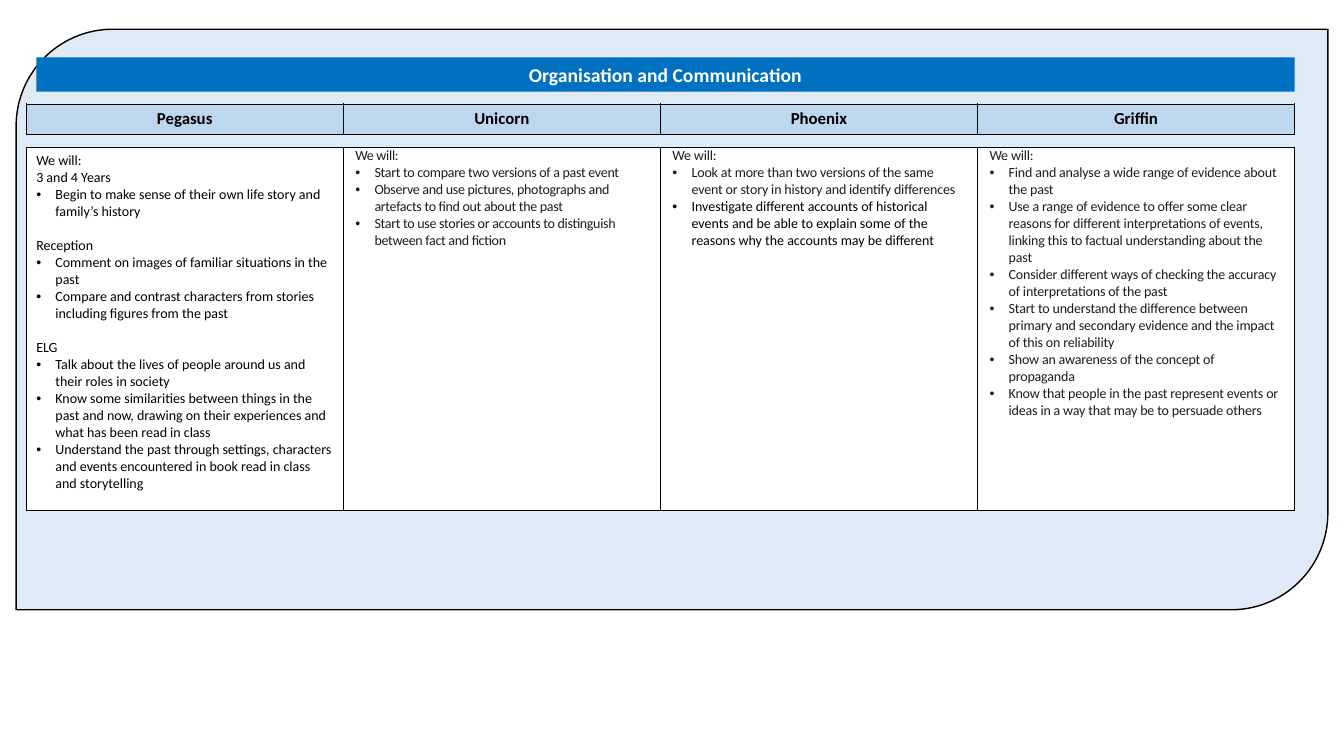
from lxml import etree
from pptx import Presentation, util as u
from pptx.dml.color import RGBColor
from pptx.enum import shapes, text
from pptx.oxml.ns import qn

BLACK, CHARCOAL, WHITE = "000000", "1C1C1C", "FFFFFF"
LEFT, WIDTH = 0.26, 12.58
PLAIN, BULLET, HEADING = "plain", "bullet", "heading"


def paint(target, colour):
    if hasattr(target, "solid"):
        target.solid()
        target = target.fore_color
    else:
        target = target.color
    target.rgb = RGBColor.from_string(colour)


def add_text(para, wording, size, colour, bold=False, spacing=0):
    span = para.add_run()
    span.text = wording
    span.font.name = "Calibri"
    span.font.size = u.Pt(size)
    span.font.bold = bold
    paint(span.font.fill, colour)
    if spacing:
        span.font._element.set("spc", str(spacing))


names = ["Pegasus", "Unicorn", "Phoenix", "Griffin"]
goals = [
    [
        (PLAIN, "We will:"),
        (PLAIN, "3 and 4 Years"),
        (BULLET, "Begin to make sense of their own life story and family’s history"),
        (HEADING, "Reception"),
        (BULLET, "Comment on images of familiar situations in the past"),
        (BULLET, "Compare and contrast characters from stories including figures from the past"),
        (HEADING, "ELG"),
        (BULLET, "Talk about the lives of people around us and their roles in society"),
        (BULLET, "Know some similarities between things in the past and now, drawing on their "
                 "experiences and what has been read in class"),
        (BULLET, "Understand the past through settings, characters and events encountered in "
                 "book read in class and storytelling"),
    ],
    [
        (PLAIN, "We will:"),
        (BULLET, "Start to compare two versions of a past event"),
        (BULLET, "Observe and use pictures, photographs and artefacts to find out about the past"),
        (BULLET, "Start to use stories or accounts to distinguish between fact and fiction"),
    ],
    [
        (PLAIN, "We will:"),
        (BULLET, "Look at more than two versions of the same event or story in history and "
                 "identify differences"),
        (BULLET, "Investigate different accounts of historical events and be able to explain "
                 "some of the reasons why the accounts may be different"),
    ],
    [
        (PLAIN, "We will:"),
        (BULLET, "Find and analyse a wide range of evidence about the past"),
        (BULLET, "Use a range of evidence to offer some clear reasons for different "
                 "interpretations of events, linking this to factual understanding about the past"),
        (BULLET, "Consider different ways of checking the accuracy of interpretations of the past"),
        (BULLET, "Start to understand the difference between primary and secondary evidence "
                 "and the impact of this on reliability"),
        (BULLET, "Show an awareness of the concept of propaganda"),
        (BULLET, "Know that people in the past represent events or ideas in a way that may be "
                 "to persuade others"),
    ],
]
letter_spacing = [0, -20, -10, -10]

deck = Presentation()
deck.slide_width, deck.slide_height = u.Inches(13.33), u.Inches(7.5)
page = deck.slides.add_slide(deck.slide_layouts[5])

panel = page.shapes.add_shape(shapes.MSO_SHAPE.ROUND_2_DIAG_RECTANGLE, u.Inches(0.16),
                              u.Inches(0.29), u.Inches(13.01), u.Inches(5.76))
panel.shadow.inherit = False
paint(panel.fill, "DEEBF7")
paint(panel.line, BLACK)
panel.line.width = u.Pt(1)

banner = page.shapes.title
banner._element.addprevious(panel._element)
banner.left, banner.top = u.Inches(0.36), u.Inches(0.57)
banner.width, banner.height = u.Inches(12.48), u.Inches(0.34)
paint(banner.fill, "0070C0")
banner.text_frame.auto_size = text.MSO_AUTO_SIZE.NONE
banner.text_frame.vertical_anchor = text.MSO_ANCHOR.MIDDLE
title = banner.text_frame.paragraphs[0]
title.alignment = text.PP_ALIGN.CENTER
add_text(title, "Organisation and Communication", 14, WHITE, bold=True)

grids = []
for top, height, colour in [(1.03, 0.3, "BDD7EE"), (1.46, 3.6, WHITE)]:
    grid = page.shapes.add_table(1, len(names), u.Inches(LEFT), u.Inches(top),
                                 u.Inches(WIDTH), u.Inches(height)).table
    grid.first_row = grid.horz_banding = False
    grids.append(grid)
    for cell in grid.iter_cells():
        paint(cell.fill, colour)
        properties = cell._tc.get_or_add_tcPr()
        for index, side in enumerate(["lnL", "lnR", "lnT", "lnB"]):
            border = etree.Element(qn(f"a:{side}"), w=str(u.Pt(0.5)))
            ink = etree.SubElement(border, qn("a:solidFill"))
            etree.SubElement(ink, qn("a:srgbClr"), val=BLACK)
            properties.insert(index, border)

header, body = grids
for column, name in enumerate(names):
    para = header.cell(0, column).text_frame.paragraphs[0]
    para.alignment = text.PP_ALIGN.CENTER
    add_text(para, name, 12, BLACK, bold=True)

    cell = body.cell(0, column)
    if column > 0:
        cell.margin_left = cell.margin_right = u.Inches(0.12)
        cell.margin_top = cell.margin_bottom = 0
    for row, (kind, wording) in enumerate(goals[column]):
        para = cell.text_frame.paragraphs[0] if row == 0 else cell.text_frame.add_paragraph()
        if kind == HEADING:
            para.space_before = u.Pt(12.2)
        if kind == BULLET:
            layout = para._p.get_or_add_pPr()
            layout.set("marL", str(u.Inches(0.19)))
            layout.set("indent", str(u.Inches(-0.19)))
            etree.SubElement(layout, qn("a:buFont"), typeface="Arial")
            etree.SubElement(layout, qn("a:buChar"), char="•")
        plain_ink = column == 0 or wording.startswith("Investigate")
        add_text(para, wording, 10, BLACK if plain_ink else CHARCOAL,
                 spacing=0 if plain_ink else letter_spacing[column])

deck.save("out.pptx")
